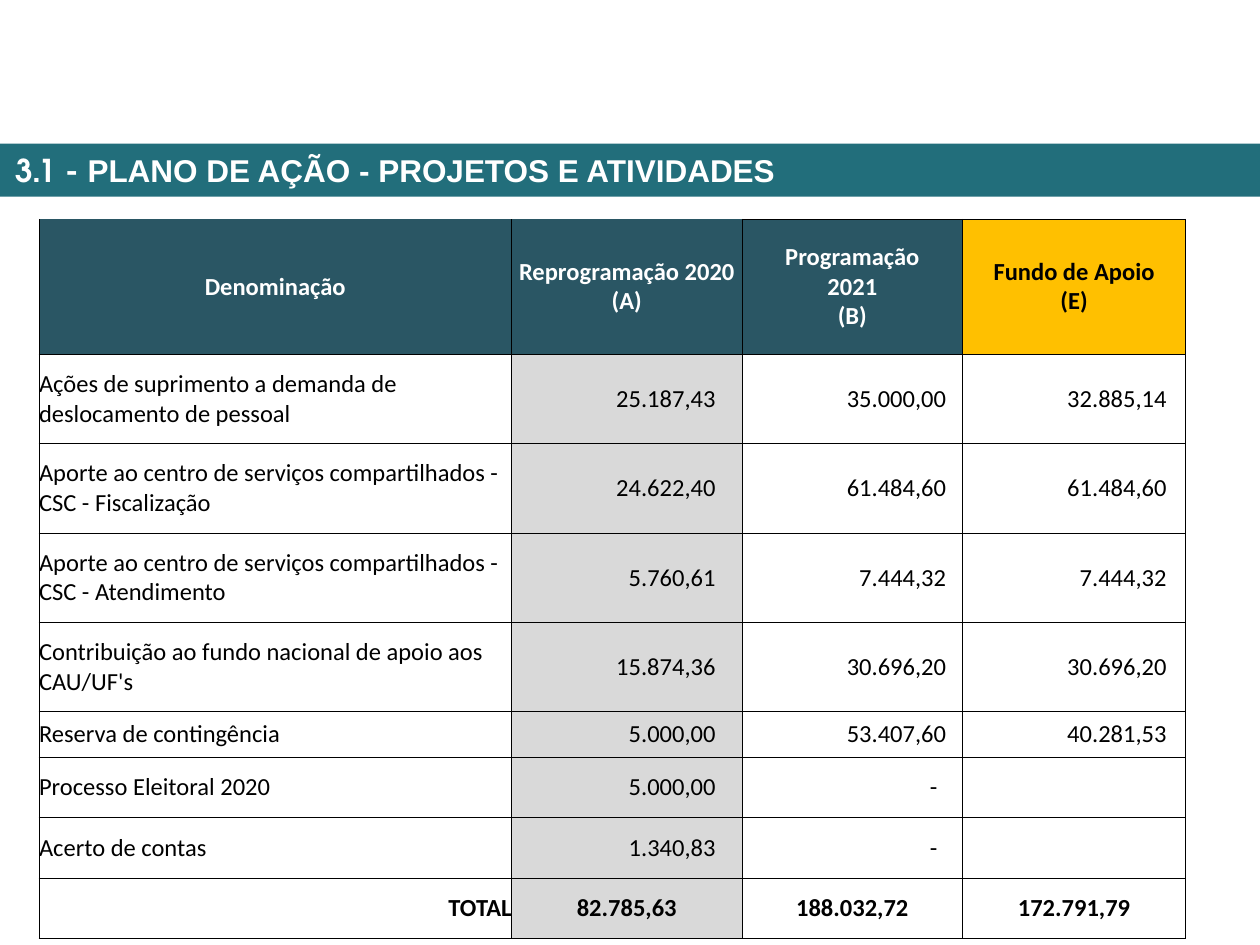
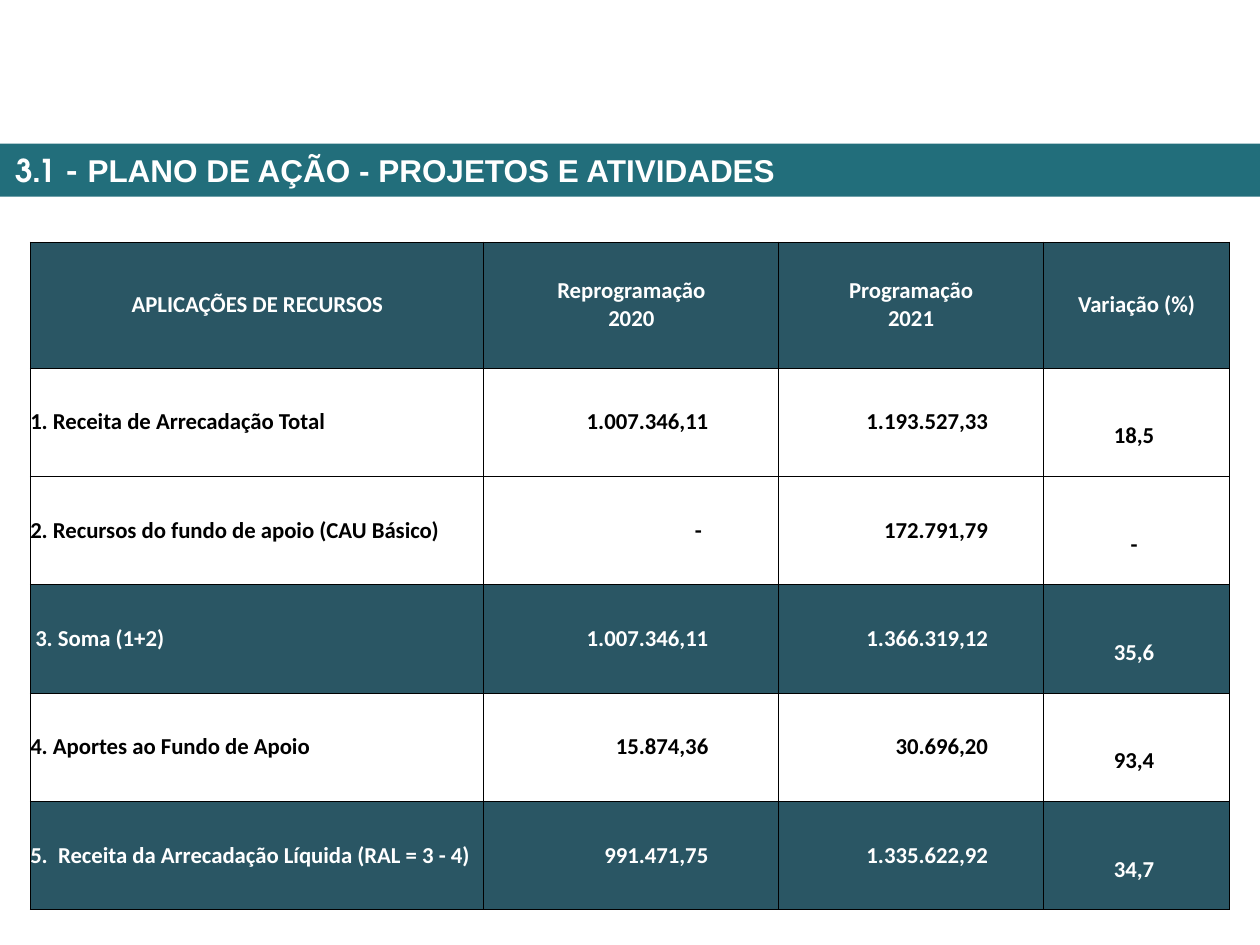
from lxml import etree
from pptx import Presentation
from pptx.dml.color import RGBColor
from pptx.enum.shapes import MSO_SHAPE as SHAPE
from pptx.enum.text import MSO_ANCHOR as ANCHOR, PP_ALIGN as ALIGN
from pptx.oxml.ns import qn
from pptx.util import Inches, Pt

BAND = RGBColor(0x22, 0x6E, 0x7B)
DARK = RGBColor(0x2A, 0x56, 0x64)
GOLD = RGBColor(0xFF, 0xC0, 0x00)
GREY = RGBColor(0xD9, 0xD9, 0xD9)
WHITE = RGBColor(0xFF, 0xFF, 0xFF)
BLACK = RGBColor(0x00, 0x00, 0x00)

PLAN_BOX = (0.31, 1.74, 9.11, 5.71)
PLAN_COLS = [3.75, 1.83, 1.75, 1.77]
PLAN_ROWS = [1.07] + [0.71] * 4 + [0.36] + [0.48] * 3
PLAN_INSETS = [0, 0.21, 0.13, 0.15]
PLAN = [
    ["Denominação", "Reprogramação 2020\v(A)", "Programação\v2021\v(B)", "Fundo de Apoio\v(E)"],
    ["Ações de suprimento a demanda de deslocamento de pessoal",
     "25.187,43", "35.000,00", "32.885,14"],
    ["Aporte ao centro de serviços compartilhados - CSC - Fiscalização",
     "24.622,40", "61.484,60", "61.484,60"],
    ["Aporte ao centro de serviços compartilhados - CSC - Atendimento",
     "5.760,61", "7.444,32", "7.444,32"],
    ["Contribuição ao fundo nacional de apoio aos CAU/UF's",
     "15.874,36", "30.696,20", "30.696,20"],
    ["Reserva de contingência", "5.000,00", "53.407,60", "40.281,53"],
    ["Processo Eleitoral 2020", "5.000,00", "-", ""],
    ["Acerto de contas", "1.340,83", "-", ""],
    ["TOTAL", "82.785,63", "188.032,72", "172.791,79"],
]

FUNDS_BOX = (0.24, 1.92, 9.52, 5.31)
FUNDS_COLS = [3.6, 2.34, 2.1, 1.48]
FUNDS_ROWS = [1] + [0.86] * 5
FUNDS_INSETS = [0, 0.56, 0.44, 0.04]
FUNDS = [
    ["APLICAÇÕES DE RECURSOS", "Reprogramação\v2020", "Programação\v2021", "Variação (%)"],
    ["1. Receita de Arrecadação Total", "1.007.346,11", "1.193.527,33", "18,5"],
    ["2. Recursos do fundo de apoio (CAU Básico)", "-", "172.791,79", "-"],
    ["3. Soma (1+2)", "1.007.346,11", "1.366.319,12", "35,6"],
    ["4. Aportes ao Fundo de Apoio", "15.874,36", "30.696,20", "93,4"],
    ["5.  Receita da Arrecadação Líquida (RAL = 3 - 4)", "991.471,75", "1.335.622,92", "34,7"],
]


def format_run(r, size, color, bold, name="Calibri"):
    r.font.size = Pt(size)
    r.font.name = name
    r.font.bold = bold
    r.font.color.rgb = color


def add_title_band(s):
    sp = s.shapes.add_shape(SHAPE.RECTANGLE, 0, Inches(1.14), Inches(10), Inches(0.42))
    sp.shadow.inherit = False
    sp.fill.solid()
    sp.fill.fore_color.rgb = BAND
    sp.line.fill.background()
    tf = sp.text_frame
    tf.word_wrap = True
    tf.vertical_anchor = ANCHOR.TOP
    tf.margin_left = tf.margin_right = Inches(0.12)
    tf.margin_top = tf.margin_bottom = Inches(0.06)
    p = tf.paragraphs[0]
    p.alignment = ALIGN.LEFT
    for text, name in [("3.1 - ", "TeX Gyre Adventor"),
                       ("PLANO DE AÇÃO - PROJETOS E ATIVIDADES", "Arial")]:
        r = p.add_run()
        r.text = text
        format_run(r, 18, WHITE, True, name)


def add_grid(s, box, cols, rows):
    frame = s.shapes.add_table(len(rows), len(cols), *map(Inches, box))
    tbl = frame.table
    tbl.first_row = tbl.horz_banding = False
    for col, width in zip(tbl.columns, cols):
        col.width = Inches(width)
    for row, height in zip(tbl.rows, rows):
        row.height = Inches(height)
    return tbl


def set_borders(cell, hidden=()):
    tcPr = cell._tc.get_or_add_tcPr()
    for side in ("lnL", "lnR", "lnT", "lnB"):
        ln = etree.SubElement(tcPr, qn(f"a:{side}"), w=str(Pt(0.5)))
        if side in hidden:
            etree.SubElement(ln, qn("a:noFill"))
        else:
            fill = etree.SubElement(ln, qn("a:solidFill"))
            etree.SubElement(fill, qn("a:srgbClr"), val=str(BLACK))


def fill_cell(cell, text, size, color, bold, fill, align, left=0, top=0, right=0, hidden=()):
    set_borders(cell, hidden)
    cell.fill.solid()
    cell.fill.fore_color.rgb = fill
    cell.vertical_anchor = ANCHOR.MIDDLE
    cell.margin_left, cell.margin_top = Inches(left), Inches(top)
    cell.margin_right, cell.margin_bottom = Inches(right), 0
    cell.text_frame.text = text
    p = cell.text_frame.paragraphs[0]
    p.alignment = align
    for r in p.runs:
        format_run(r, size, color, bold)


def add_plan_table(s):
    tbl = add_grid(s, PLAN_BOX, PLAN_COLS, PLAN_ROWS)
    last = len(PLAN) - 1
    for i, row in enumerate(PLAN):
        for j, text in enumerate(row):
            header, total = i == 0, i == last
            fill = GREY if j == 1 else WHITE
            if header:
                fill = GOLD if j == 3 else DARK
            align, right = (ALIGN.RIGHT, PLAN_INSETS[j]) if j else (ALIGN.LEFT, 0)
            if text == "-":
                right = 0.2
            if header or total and j:
                align, right = ALIGN.CENTER, 0
            elif total:
                align = ALIGN.RIGHT
            fill_cell(tbl.cell(i, j), text, 14, WHITE if fill == DARK else BLACK,
                      header or total, fill, align, right=right,
                      hidden=("lnT",) if header and j < 2 else ())


def add_funds_table(s):
    tbl = add_grid(s, FUNDS_BOX, FUNDS_COLS, FUNDS_ROWS)
    for i, row in enumerate(FUNDS):
        dark = i in (0, 3, 5)
        for j, text in enumerate(row):
            align = (ALIGN.LEFT, ALIGN.RIGHT, ALIGN.RIGHT, ALIGN.CENTER)[j]
            left, top, right = 0, 0.22 if j == 3 else 0, FUNDS_INSETS[j]
            if i == 0:
                align, top, right = ALIGN.CENTER, 0, 0
            elif text.startswith("3."):
                left = 0.04
            elif text == "-" and j == 1:
                right = 0.61
            fill_cell(tbl.cell(i, j), text, 13, WHITE if dark else BLACK, True,
                      DARK if dark else WHITE, align, left, top, right)


def main():
    prs = Presentation()
    prs.slide_width, prs.slide_height = Inches(10), Inches(7.5)
    for add_table in (add_plan_table, add_funds_table):
        s = prs.slides.add_slide(prs.slide_layouts[6])
        add_title_band(s)
        add_table(s)
    prs.save("out.pptx")


if __name__ == "__main__":
    main()
